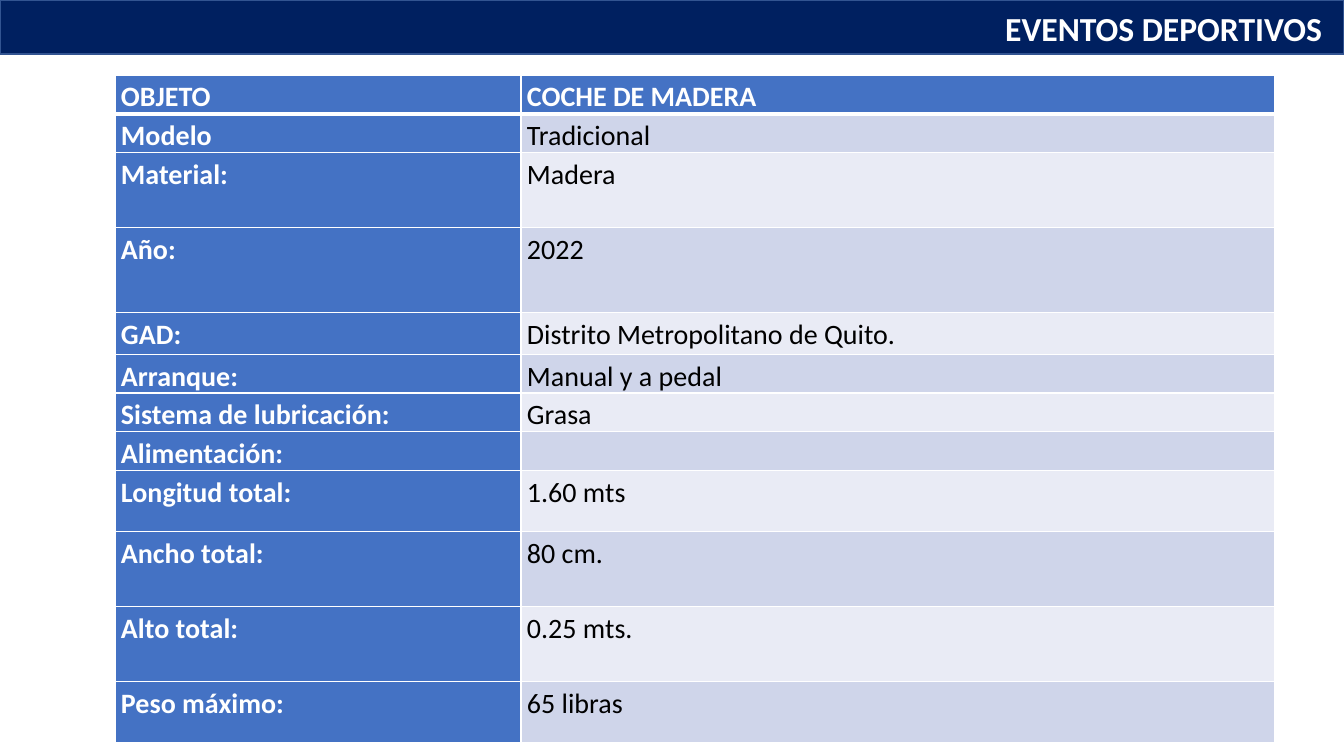
from lxml.etree import SubElement
from pptx import Presentation
from pptx.dml.color import RGBColor as RGB
from pptx.enum.shapes import MSO_SHAPE as SHAPE
from pptx.enum.text import PP_ALIGN as ALIGN
from pptx.oxml.ns import qn
from pptx.util import Pt

PX = 914400 / 100.8
COLORS = {"navy": "002060", "edge": "325491", "blue": "4472C4", "dark": "CFD5EA",
          "light": "E9EBF5", "white": "FFFFFF", "black": "000000"}
ROWS = [
    ("OBJETO", "COCHE DE MADERA", 37),
    ("Modelo", "Tradicional", 37),
    ("Material:", "Madera", 75),
    ("Año:", "2022", 85),
    ("GAD:", "Distrito Metropolitano de Quito.", 42),
    ("Arranque:", "Manual y a pedal", 37),
    ("Sistema de lubricación:", "Grasa", 37),
    ("Alimentación:", "", 37),
    ("Longitud total:", "1.60 mts", 61),
    ("Ancho total:", "80 cm.", 75),
    ("Alto total:", "0.25 mts.", 75),
    ("Peso máximo:", "65 libras", 61),
]


def px(*vals):
    return [round(v * PX) for v in vals]


def add_run(para, text, size, color, bold):
    run = para.add_run()
    run.text = text
    font = run.font
    font.name, font.size, font.bold = "Calibri", Pt(size), bold
    font.color.rgb = RGB.from_string(COLORS[color])


prs = Presentation()
prs.slide_width, prs.slide_height = px(1344, 756)
slide = prs.slides.add_slide(prs.slide_layouts[6])

# Title bar
bar = slide.shapes.add_shape(SHAPE.RECTANGLE, *px(0, 0, 1344, 54))
bar.shadow.inherit = False
bar.fill.solid()
bar.fill.fore_color.rgb = RGB.from_string(COLORS["navy"])
bar.line.color.rgb = RGB.from_string(COLORS["edge"])
bar.line.width = Pt(1)

title = slide.shapes.add_textbox(*px(274, 3, 1058, 50)).text_frame
title.word_wrap = True
title.paragraphs[0].alignment = ALIGN.RIGHT
add_run(title.paragraphs[0], "EVENTOS DEPORTIVOS", 24, "white", True)

# Data sheet
high = sum(row[2] for row in ROWS)
table = slide.shapes.add_table(len(ROWS), 2, *px(115, 75, 1160, high)).table
for col, wide in zip(table.columns, px(406, 754)):
    col.width = wide

for r, (label, value, tall) in enumerate(ROWS):
    table.rows[r].height = px(tall)[0]
    for c, text in enumerate((label, value)):
        cell = table.cell(r, c)
        head = r == 0 or c == 0
        cell.margin_left, cell.margin_right = px(6, 6)
        cell.margin_top = cell.margin_bottom = 0

        # White borders, thicker under the header
        props = cell._tc.get_or_add_tcPr()
        for side in ("lnL", "lnR", "lnT", "lnB"):
            thick = (r, side) in ((0, "lnB"), (1, "lnT"))
            line = SubElement(props, qn("a:" + side), w=str(Pt(3 if thick else 1)))
            fill = SubElement(line, qn("a:solidFill"))
            SubElement(fill, qn("a:srgbClr"), val=COLORS["white"])

        # Fill and text
        tone = "blue" if head else "dark" if r % 2 else "light"
        cell.fill.solid()
        cell.fill.fore_color.rgb = RGB.from_string(COLORS[tone])
        para = cell.text_frame.paragraphs[0]
        para.line_spacing = 1.15
        if c == 0 and r > 6:
            para.alignment = ALIGN.JUSTIFY
        if text:
            add_run(para, text, 20, "white" if head else "black", head)

prs.save("out.pptx")
